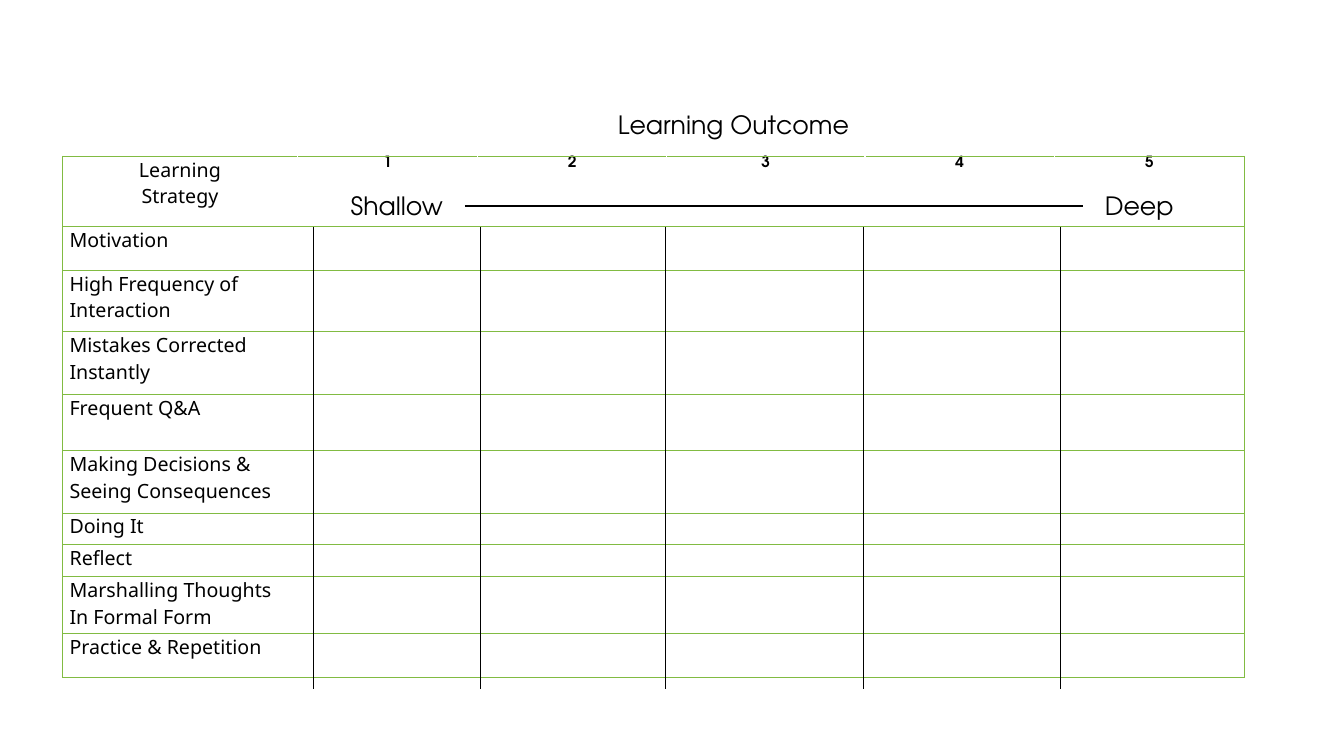
import pptx
import pptx.util
import pptx.dml.color
import pptx.enum.shapes
import pptx.enum.text
import pptx.oxml
import pptx.oxml.ns

Inches = pptx.util.Inches
Pt = pptx.util.Pt
RGB = pptx.dml.color.RGBColor.from_string
align = pptx.enum.text.PP_ALIGN
hues = {"ink": "000000", "paper": "FFFFFF", "green": "81BB42"}
sans = "Noto Sans"
round_face = "TeX Gyre Adventor"


def write(frame, text, size=14, face=sans, bold=False, side=align.LEFT):
    for i, line in enumerate(text.split("\n")):
        para = frame.paragraphs[0] if i == 0 else frame.add_paragraph()
        para.alignment = side
        run = para.add_run()
        run.text = line
        run.font.size = Pt(size)
        run.font.name = face
        run.font.bold = bold
        run.font.color.rgb = RGB(hues["ink"])


def edge(cell, sides):
    props = cell._tc.get_or_add_tcPr()
    for i, side in enumerate(s for s in "LRTB" if s in sides):
        props.insert(i, pptx.oxml.parse_xml(
            f'<a:ln{side} {pptx.oxml.ns.nsdecls("a")} w="9525"><a:solidFill>'
            f'<a:srgbClr val="{hues["green"]}"/></a:solidFill></a:ln{side}>'))


deck = pptx.Presentation()
deck.slide_width = Inches(13.33)
deck.slide_height = Inches(7.5)
slide = deck.slides.add_slide(deck.slide_layouts[6])
shapes = slide.shapes

plans = ["Motivation", "High Frequency of Interaction",
         "Mistakes Corrected Instantly", "Frequent Q&A",
         "Making Decisions & Seeing Consequences", "Doing It", "Reflect",
         "Marshalling Thoughts In Formal Form", "Practice & Repetition"]
wides = [2.33, 1.79, 1.87, 1.97, 1.88, 1.88]
highs = [0.7, 0.43, 0.61, 0.62, 0.56, 0.62, 0.31, 0.32, 0.57, 0.43]
grid = shapes.add_table(len(highs), len(wides), Inches(0.62), Inches(1.55),
                        Inches(sum(wides)), Inches(sum(highs))).table
grid.first_row = False
grid.horz_banding = False
for col, wide in zip(grid.columns, wides):
    col.width = Inches(wide)
for row, high in zip(grid.rows, highs):
    row.height = Inches(high)

for r in range(len(highs)):
    for c in range(len(wides)):
        cell = grid.cell(r, c)
        cell.margin_left = cell.margin_right = Inches(0.07)
        cell.margin_top = cell.margin_bottom = 0
        cell.fill.solid()
        cell.fill.fore_color.rgb = RGB(hues["paper"])
        edge(cell, "TB" + ("L" if c == 0 else "R" if c == len(wides) - 1 else ""))
        if r == 0 and c == 0:
            write(cell.text_frame, "Learning\nStrategy", side=align.CENTER)
        elif r == 0:
            write(cell.text_frame, str(c), size=11, face=round_face,
                  bold=True, side=align.CENTER)
        elif c == 0:
            write(cell.text_frame, plans[r - 1])

for text, left, top, wide in [("Learning Outcome", 6.03, 1.04, 2.52),
                              ("Shallow", 3.38, 1.84, 1.12),
                              ("Deep", 10.86, 1.84, 0.9)]:
    box = shapes.add_textbox(Inches(left), Inches(top), Inches(wide), Inches(0.4))
    box.text_frame.word_wrap = False
    write(box.text_frame, text, size=18, face=round_face)

rules = [(x, 2.25, x, 6.84, 0.75) for x in (3.11, 4.77, 6.6, 8.56, 10.52)]
rules.append((4.61, 2.04, 10.74, 2.04, 1.5))
for x1, y1, x2, y2, thick in rules:
    line = shapes.add_connector(pptx.enum.shapes.MSO_CONNECTOR.STRAIGHT,
                                Inches(x1), Inches(y1), Inches(x2), Inches(y2))
    line.line.color.rgb = RGB(hues["ink"])
    line.line.width = Pt(thick)
    line._element.spPr.append(pptx.oxml.parse_xml(
        f'<a:effectLst {pptx.oxml.ns.nsdecls("a")}/>'))

deck.save("out.pptx")
